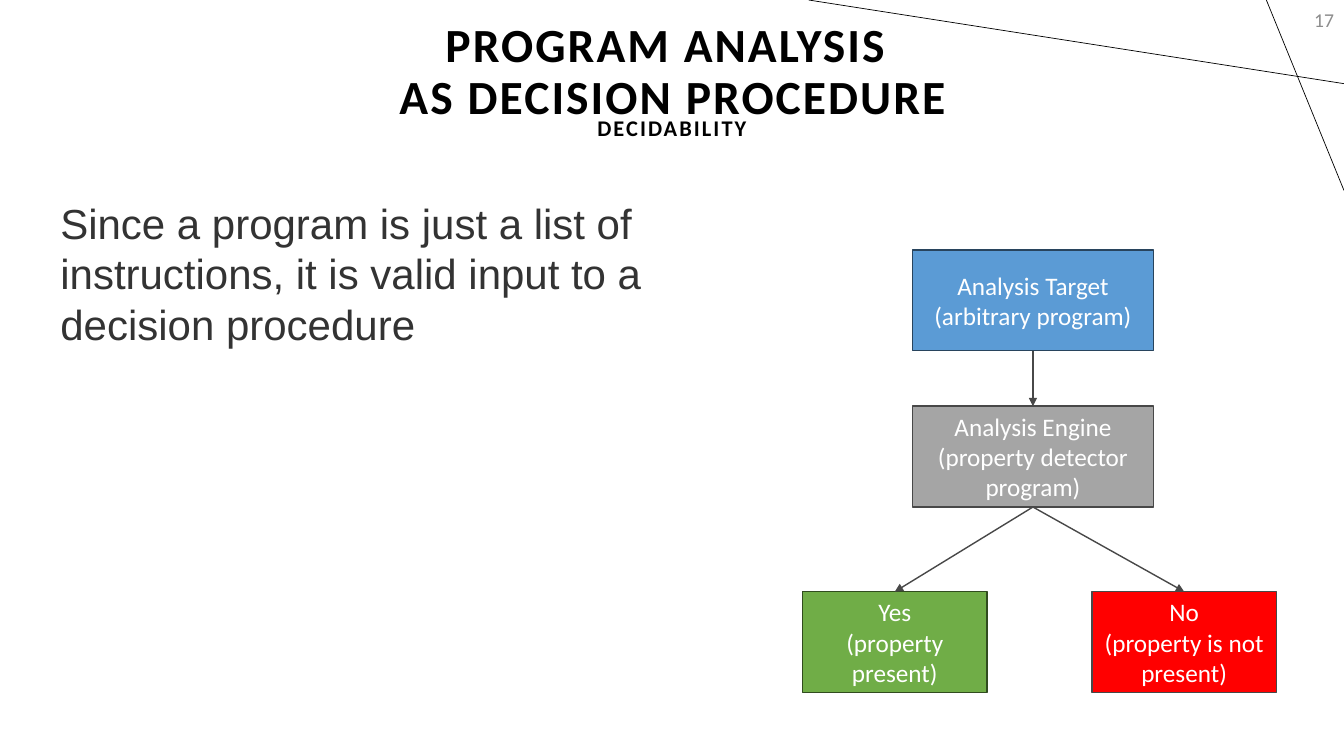
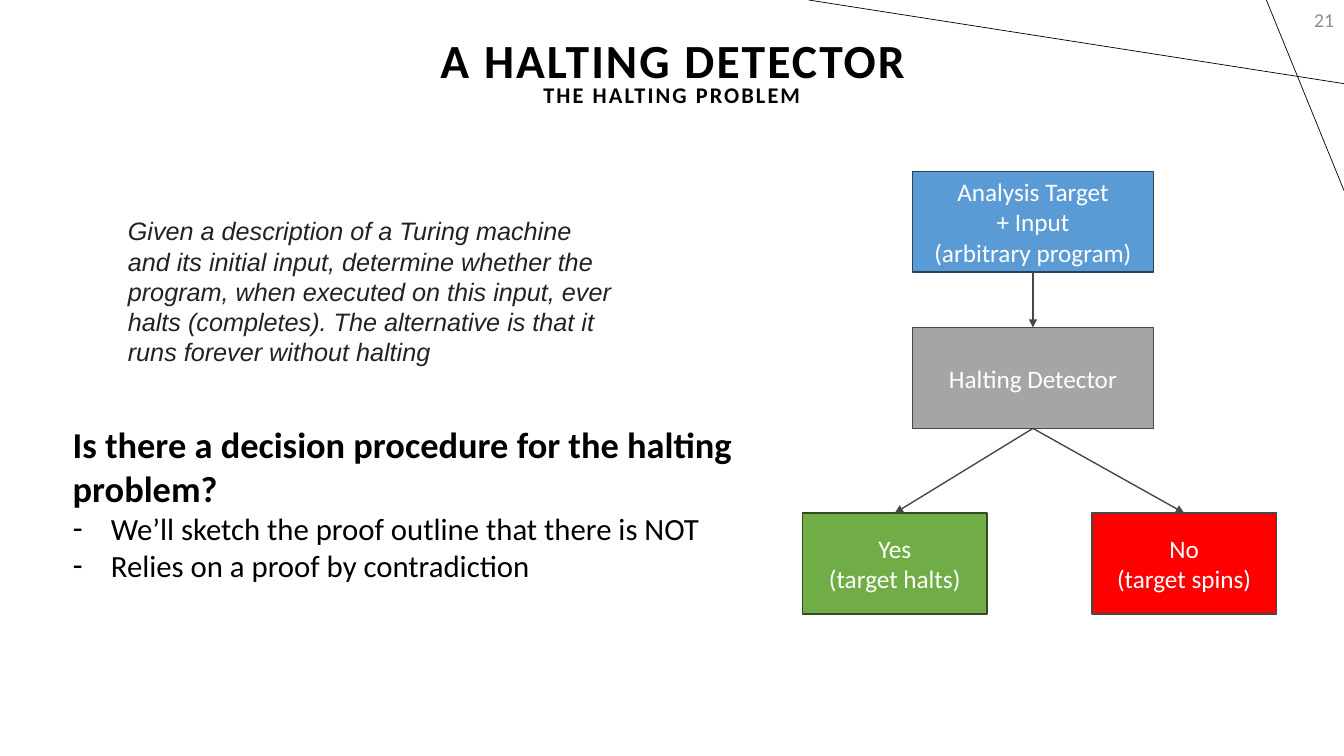
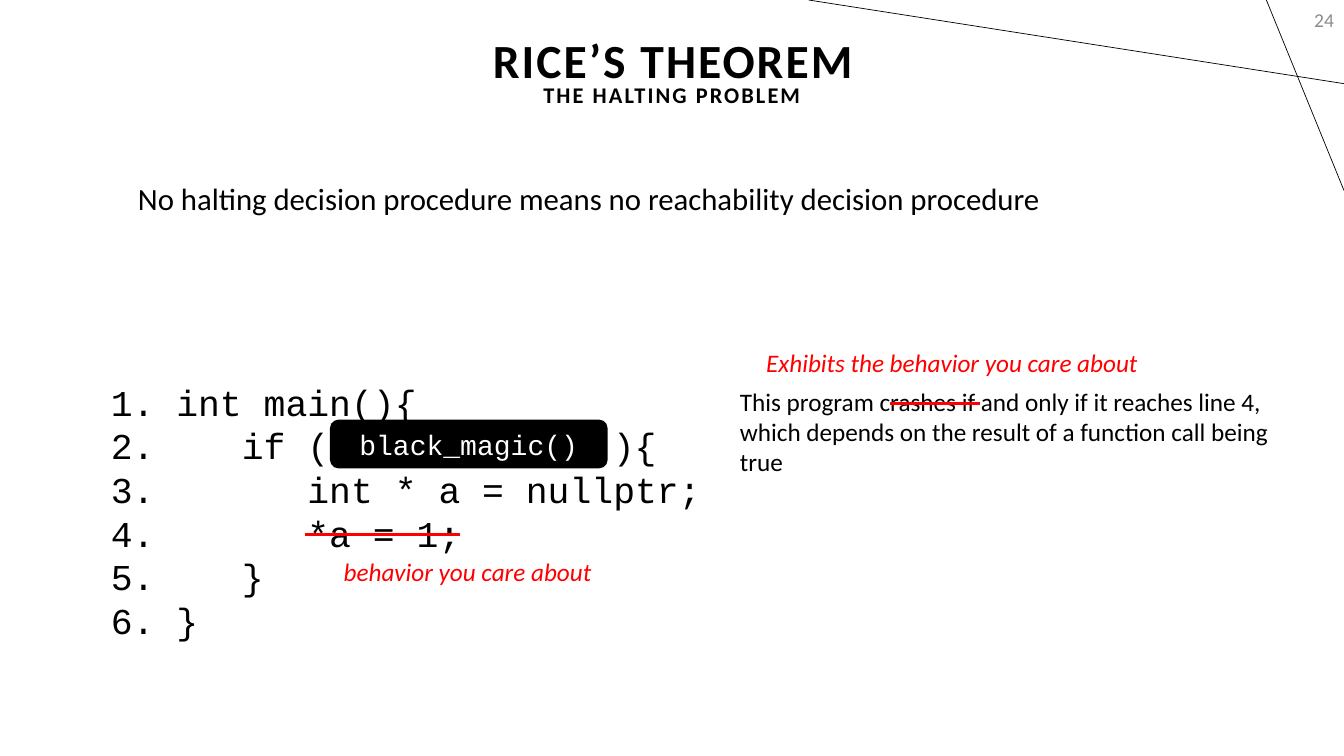
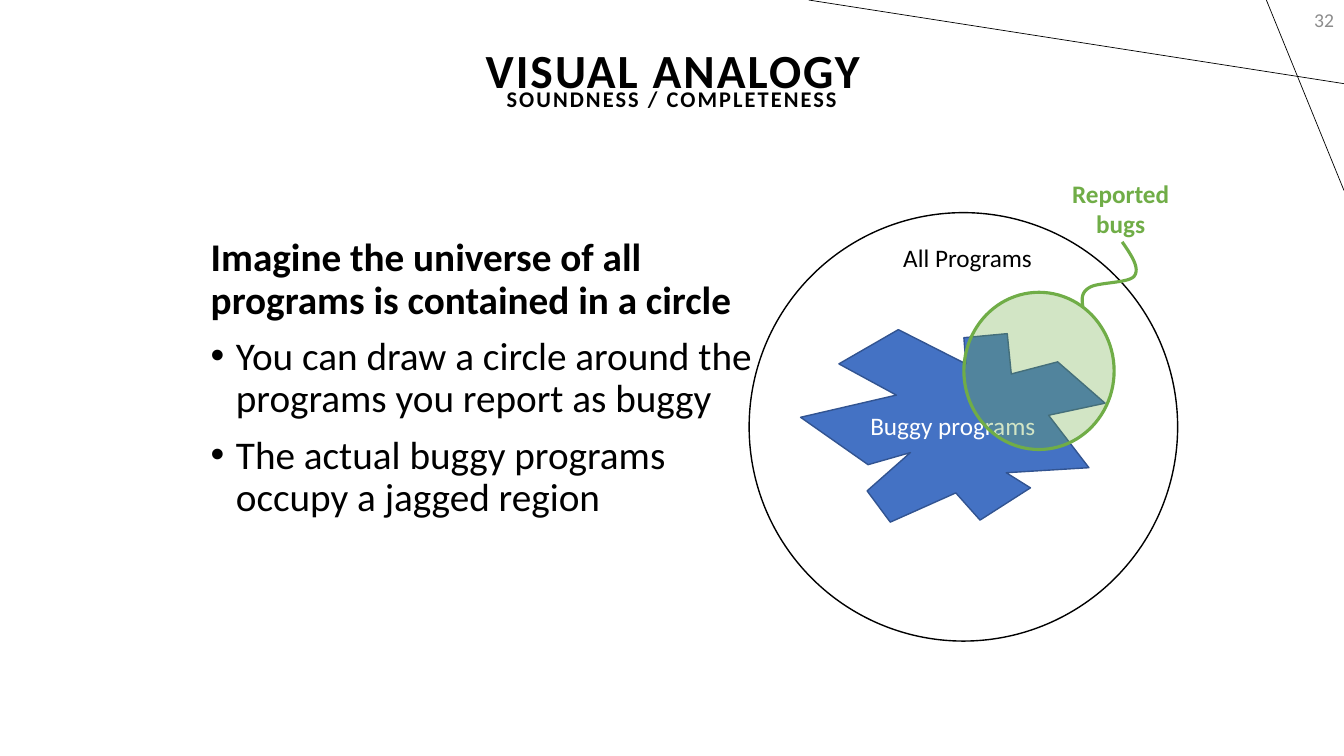
from lxml.etree import SubElement
from pptx import Presentation
from pptx.dml.color import RGBColor
from pptx.enum.shapes import MSO_CONNECTOR, MSO_SHAPE
from pptx.enum.text import MSO_ANCHOR, MSO_AUTO_SIZE, PP_ALIGN
from pptx.oxml.ns import qn
from pptx.util import Inches, Pt

BLACK = RGBColor(0x00, 0x00, 0x00)
WHITE = RGBColor(0xFF, 0xFF, 0xFF)
RED = RGBColor(0xFF, 0x00, 0x00)
GREEN = RGBColor(0x70, 0xAD, 0x47)
DARK_GREEN = RGBColor(0x31, 0x4C, 0x1F)
SKY = RGBColor(0x5B, 0x9B, 0xD5)
NAVY = RGBColor(0x28, 0x44, 0x5D)
BLUE = RGBColor(0x44, 0x72, 0xC4)
DARK_BLUE = RGBColor(0x32, 0x54, 0x91)
GRAY = RGBColor(0xA5, 0xA5, 0xA5)
DARK_GRAY = RGBColor(0x48, 0x48, 0x48)
NUMBER_GRAY = RGBColor(0x8C, 0x8C, 0x8C)
TEXT_GRAY = RGBColor(0x33, 0x33, 0x33)
QUOTE_GRAY = RGBColor(0x22, 0x22, 0x22)

# Content: title, title top, subtitle, subtitle top, slide number
HEADINGS = [
    ("PROGRAM ANALYSIS \vAS DECISION PROCEDURE", 0, "DECIDABILITY", 0.56, 17),
    ("A HALTING DETECTOR", -0.1, "THE HALTING PROBLEM", 0.23, 21),
    ("RICE’S THEOREM", -0.1, "THE HALTING PROBLEM", 0.23, 24),
    ("VISUAL ANALOGY", 0, "SOUNDNESS / COMPLETENESS", 0.27, 32),
]
CORNER_LINES = [((13.33, 0.83), (8.02, 0)), ((12.56, 0), (13.33, 1.89))]

STATEMENT = ("Since a program is just a list of instructions, "
             "it is valid input to a decision procedure")
PROPERTY_FLOW = ["Analysis Target\n(arbitrary program)",
                 "Analysis Engine\n(property detector program)",
                 "Yes\n(property present)",
                 "No\n(property is not present)"]

HALTING_DEFINITION = (
    "Given a description of a Turing machine and its initial input, determine "
    "whether the program, when executed on this input, ever halts (completes). "
    "The alternative is that it runs forever without halting")
HALTING_POINTS = ["Is there a decision procedure for the halting problem?",
                  "We’ll sketch the proof outline that there is NOT",
                  "Relies on a proof by contradiction"]
HALTING_FLOW = ["Analysis Target\n+ Input\n(arbitrary program)",
                "Halting Detector",
                "Yes\n(target halts)",
                "No\n(target spins)"]

REACHABILITY = "No halting decision procedure means no reachability decision procedure"
# The tab leaves room for the function call box
CODE = """1. int main(){
2.    if (\t){
3.       int * a = nullptr;
4.       *a = 1;
5.    }
6. }"""
CODE_TAB = 4.98
CRASH_NOTE = """This program crashes if and only if it reaches line 4,
which depends on the result of a function call being
true"""
RED_NOTES = [("Exhibits the behavior you care about", (7.5, 3.4, 4.18, 0.4)),
             ("behavior you care about", (3.31, 5.47, 2.84, 0.4))]
STRIKES = [((8.83, 4), (9.72, 4)), ((3.03, 5.3), (4.56, 5.3))]

ANALOGY_POINTS = ["Imagine the universe of all programs is contained in a circle",
                  "You can draw a circle around the programs you report as buggy",
                  "The actual buggy programs occupy a jagged region"]
JAGGED = [(9.58, 3.61), (8.91, 3.27), (8.32, 3.61), (8.89, 3.92), (7.94, 4.14),
          (8.61, 4.61), (9.03, 4.49), (8.6, 4.87), (8.83, 5.18), (9.48, 4.89),
          (9.72, 5.16), (10.22, 4.84), (9.98, 4.69), (10.8, 4.64), (10.4, 4.12),
          (10.96, 4), (10.49, 3.59), (10.03, 3.71), (9.99, 3.31), (9.56, 3.35)]
# Bezier points: a start, then two controls and an end for each curve
TAIL = [(11.13, 2.4), (11.22, 2.53), (11.31, 2.66), (11.25, 2.74), (11.2, 2.81),
        (10.89, 2.8), (10.81, 2.85), (10.72, 2.9), (10.73, 2.97), (10.74, 3.04)]

# Boxes of a flow: left, distance below the top box, width, fill, line
FLOW_BOXES = [(9.05, 0, 2.39, SKY, NAVY), (9.05, 1.55, 2.39, GRAY, DARK_GRAY),
              (7.96, 3.39, 1.83, GREEN, DARK_GREEN), (10.83, 3.39, 1.83, RED, DARK_GRAY)]
FLOW_LINKS = [(0, 1), (1, 2), (1, 3)]


# Text
def write(tf, text, size, color=BLACK, font="Calibri", bold=False, italic=False,
          align=PP_ALIGN.LEFT, spacing=1.0, before=0, spc=None):
    tf.text = text
    for p in tf.paragraphs:
        p.alignment, p.line_spacing = align, spacing
        p.space_before = Pt(before)
        for r in p.runs:
            f = r.font
            f.name, f.size, f.bold, f.italic = font, Pt(size), bold, italic
            f.color.rgb = color
            if spc:
                r._r.get_or_add_rPr().set("spc", str(spc))


def place(sp, box):
    sp.left, sp.top, sp.width, sp.height = map(Inches, box)


def add_text(s, text, box, size, wrap=True, anchor=MSO_ANCHOR.TOP, **style):
    tf = s.shapes.add_textbox(*map(Inches, box)).text_frame
    tf.word_wrap, tf.vertical_anchor = wrap, anchor
    if not wrap:
        tf.auto_size = MSO_AUTO_SIZE.SHAPE_TO_FIT_TEXT
    write(tf, text, size, **style)
    return tf


def add_tab_stop(p, position):
    tabs = SubElement(p._p.get_or_add_pPr(), qn("a:tabLst"))
    tab = SubElement(tabs, qn("a:tab"))
    tab.set("pos", str(Inches(position)))
    tab.set("algn", "l")


def add_list(s, lines, box, size, mark, indent, item_size, **style):
    """Fill the body placeholder: a bold lead, then marked items."""
    body = s.placeholders[1]
    place(body, box)
    tf = body.text_frame
    tf.auto_size = MSO_AUTO_SIZE.NONE
    write(tf, "\n".join(lines), size, **style)
    for i, p in enumerate(tf.paragraphs):
        pPr = p._p.get_or_add_pPr()
        margin = Inches(indent) if i else 0
        pPr.set("marL", str(margin))
        pPr.set("indent", str(-margin))
        if i:
            SubElement(pPr, qn("a:buChar")).set("char", mark)
        else:
            SubElement(pPr, qn("a:buNone"))
        for r in p.runs:
            r.font.bold = i == 0
            r.font.size = Pt(item_size if i else size)


# Shapes
def paint(sp, fill, line, width=1):
    sp.shadow.inherit = False
    if fill is None:
        sp.fill.background()
    else:
        sp.fill.solid()
        sp.fill.fore_color.rgb = fill
    sp.line.color.rgb = line
    sp.line.width = Pt(width)


def add_shape(s, kind, box, fill, line, width=1):
    sp = s.shapes.add_shape(kind, *map(Inches, box))
    paint(sp, fill, line, width)
    return sp


def label(sp, text, size=18, font="Calibri"):
    tf = sp.text_frame
    tf.word_wrap, tf.vertical_anchor = True, MSO_ANCHOR.MIDDLE
    write(tf, text, size, WHITE, font, align=PP_ALIGN.CENTER)


def add_line(s, start, end, color, width, arrow=False):
    cn = s.shapes.add_connector(MSO_CONNECTOR.STRAIGHT, *map(Inches, start + end))
    cn.line.color.rgb = color
    cn.line.width = Pt(width)
    spPr = cn.element.spPr
    if arrow:
        SubElement(spPr.find(qn("a:ln")), qn("a:tailEnd")).set("type", "triangle")
    SubElement(spPr, qn("a:effectLst"))
    return cn


def add_outline(s, points, close):
    pts = [(Inches(x), Inches(y)) for x, y in points]
    fb = s.shapes.build_freeform(*pts[0])
    fb.add_line_segments(pts[1:], close=close)
    return fb.convert_to_shape()


def bezier(points, steps=12):
    curve = [points[0]]
    for i in range(0, len(points) - 1, 3):
        for k in range(1, steps + 1):
            t = k / steps
            weights = ((1 - t) ** 3, 3 * t * (1 - t) ** 2, 3 * t * t * (1 - t), t ** 3)
            curve.append(tuple(sum(w * pt[axis] for w, pt in zip(weights, points[i:i + 4]))
                               for axis in (0, 1)))
    return curve


def add_flow(s, texts, top):
    boxes = []
    for text, (left, drop, width, fill, line) in zip(texts, FLOW_BOXES):
        sp = add_shape(s, MSO_SHAPE.RECTANGLE, (left, top + drop, width, 1), fill, line)
        label(sp, text)
        boxes.append(sp)
    for a, b in FLOW_LINKS:
        cn = add_line(s, (0, 0), (1, 1), DARK_GRAY, 1, arrow=True)
        cn.begin_connect(boxes[a], 2)
        cn.end_connect(boxes[b], 0)


# Shared slide parts
def add_corner_lines(s, master):
    for start, end in CORNER_LINES:
        cn = add_line(s, start, end, BLACK, 0.5)
        master.shapes.element.append(cn.element)


def add_slide(prs, layout, heading):
    title, title_top, subtitle, subtitle_top, number = heading
    s = prs.slides.add_slide(prs.slide_layouts[layout])
    style = dict(bold=True, align=PP_ALIGN.CENTER, spacing=0.9, spc=150)
    place(s.shapes.title, (0.02, title_top, 13.31, 1.45))
    tf = s.shapes.title.text_frame
    tf.auto_size, tf.vertical_anchor = MSO_AUTO_SIZE.NONE, MSO_ANCHOR.MIDDLE
    write(tf, title, 34, **style)
    add_text(s, str(number), (10.33, 0, 3, 0.4), 14, anchor=MSO_ANCHOR.MIDDLE,
             color=NUMBER_GRAY, align=PP_ALIGN.RIGHT)
    add_text(s, subtitle, (0.01, subtitle_top, 13.31, 1.45), 16,
             anchor=MSO_ANCHOR.MIDDLE, **style)
    return s


# Slides
def build_decision(prs, heading):
    s = add_slide(prs, 5, heading)
    add_corner_lines(s, prs.slide_master)
    add_text(s, STATEMENT, (0.5, 1.91, 6.49, 1.62), 30, color=TEXT_GRAY, font="Arial")
    add_flow(s, PROPERTY_FLOW, 2.48)


def build_halting(prs, heading):
    s = add_slide(prs, 1, heading)
    add_text(s, HALTING_DEFINITION, (1.17, 2.09, 5, 1.62), 18,
             color=QUOTE_GRAY, font="Arial", italic=True)
    add_list(s, HALTING_POINTS, (0.62, 4.14, 6.9, 1.72), 26, "-", 0.38, 22)
    add_flow(s, HALTING_FLOW, 1.7)


def build_rice(prs, heading):
    s = add_slide(prs, 5, heading)
    add_text(s, REACHABILITY, (1.27, 1.73, 11.31, 0.47), 22)
    code = add_text(s, CODE, (1, 3.72, 6.41, 2.73), 26, font="Courier New")
    add_tab_stop(code.paragraphs[1], CODE_TAB)
    call = add_shape(s, MSO_SHAPE.ROUNDED_RECTANGLE, (3.28, 4.17, 2.74, 0.47), BLACK, BLACK)
    label(call, "black_magic()", 20, "Courier New")
    add_text(s, CRASH_NOTE, (7.24, 3.78, 5.81, 1.01), 18, wrap=False)
    for text, box in RED_NOTES:
        add_text(s, text, box, 18, wrap=False, color=RED, italic=True)
    for start, end in STRIKES:
        add_line(s, start, end, RED, 2.25)


def build_analogy(prs, heading):
    s = add_slide(prs, 1, heading)
    add_list(s, ANALOGY_POINTS, (1.99, 2.31, 5.86, 4.76), 28, "•", 0.25, 28,
             spacing=0.9, before=10)
    add_shape(s, MSO_SHAPE.OVAL, (7.43, 2.11, 4.25, 4.25), WHITE, BLACK)
    add_text(s, "All Programs", (8.86, 2.36, 1.49, 0.4), 18, wrap=False)
    buggy = add_outline(s, JAGGED, True)
    paint(buggy, BLUE, DARK_BLUE)
    label(buggy, "Buggy programs")
    reported = add_shape(s, MSO_SHAPE.OVAL, (9.56, 2.9, 1.49, 1.56), GREEN, GREEN, 2.25)
    fill = reported.element.spPr.find(qn("a:solidFill"))
    SubElement(fill[0], qn("a:alpha")).set("val", "31000")
    add_text(s, "Reported\nbugs", (10.53, 1.72, 1.17, 0.71), 18, wrap=False,
             color=GREEN, bold=True, align=PP_ALIGN.CENTER)
    paint(add_outline(s, bezier(TAIL), False), None, GREEN, 2.25)


def main():
    prs = Presentation()
    prs.slide_width, prs.slide_height = Inches(13.33), Inches(7.5)
    builders = [build_decision, build_halting, build_rice, build_analogy]
    for build, heading in zip(builders, HEADINGS):
        build(prs, heading)
    prs.save("out.pptx")


if __name__ == "__main__":
    main()
